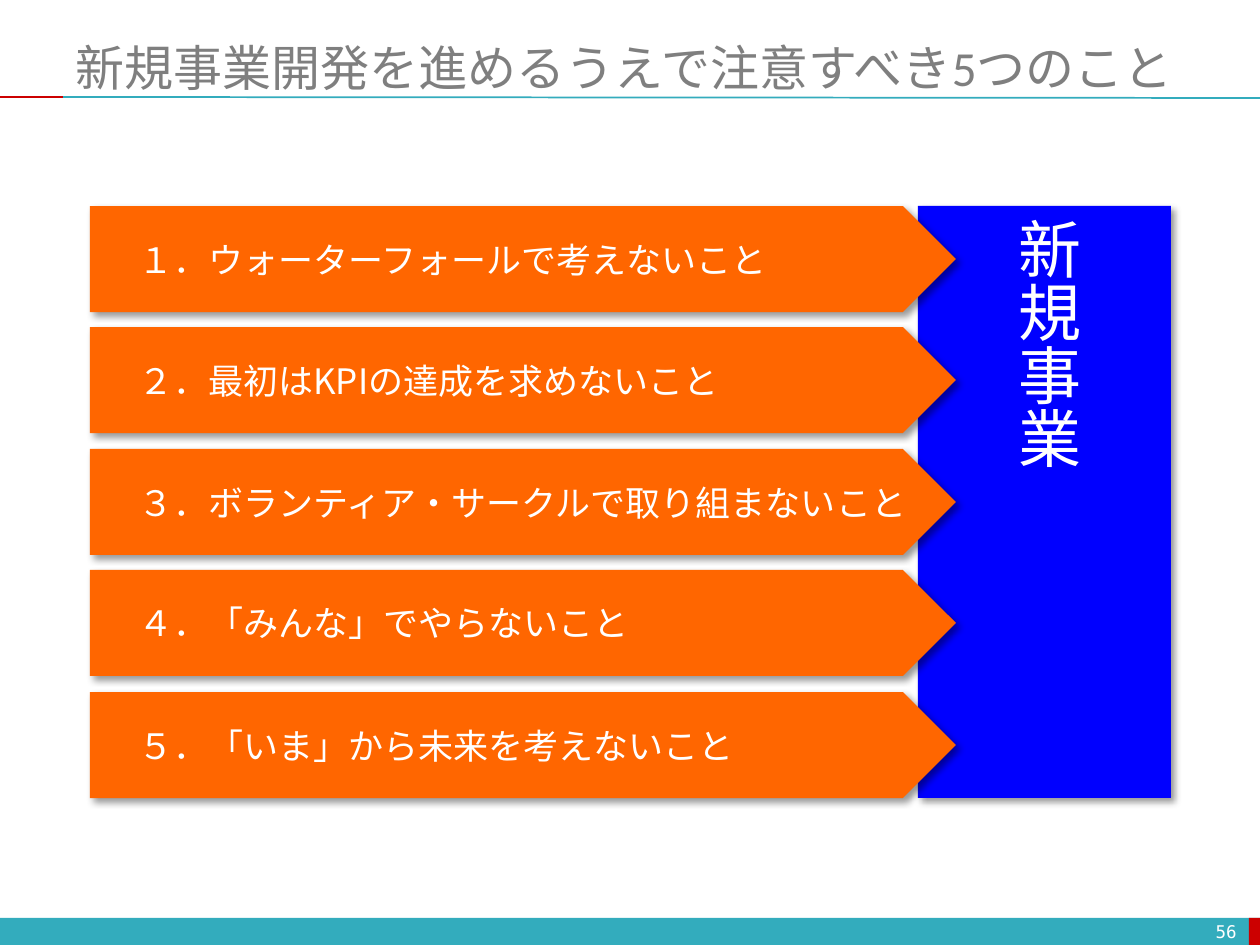
import pptx
import pptx.dml.color
import pptx.enum.shapes
import pptx.enum.text
import pptx.oxml
import pptx.oxml.ns
import pptx.util

RGB = pptx.dml.color.RGBColor
SHAPE = pptx.enum.shapes.MSO_SHAPE
ALIGN = pptx.enum.text.PP_ALIGN
TEAL = RGB(0x33, 0xAC, 0xBD)
RED = RGB(0xCC, 0x00, 0x00)
BLUE = RGB(0x00, 0x00, 0xFF)
ORANGE = RGB(0xFF, 0x66, 0x00)
GRAY = RGB(0x7F, 0x7F, 0x7F)
WHITE = RGB(0xFF, 0xFF, 0xFF)
CJK = "Noto Sans CJK JP"
SCALE = 914400 / 126
INSET = 13

POINTS = [
    "１．ウォーターフォールで考えないこと",
    "２．最初はKPIの達成を求めないこと",
    "３．ボランティア・サークルで取り組まないこと",
    "４．「みんな」でやらないこと",
    "５．「いま」から未来を考えないこと",
]
SHADOW = (
    '<a:effectLst %s><a:outerShdw blurRad="50800" dist="38100" dir="2700000" '
    'algn="tl" rotWithShape="0"><a:srgbClr val="000000"><a:alpha val="40000"/>'
    "</a:srgbClr></a:outerShdw></a:effectLst>" % pptx.oxml.ns.nsdecls("a")
)


def px(n):
    """Turn pixels into EMU."""
    return pptx.util.Emu(round(n * SCALE))


def set_text(sp, text, size, font, color, align=ALIGN.LEFT, left=INSET):
    """Write one vertically centred line of text into a shape."""
    tf = sp.text_frame
    tf.word_wrap = True
    tf.auto_size = pptx.enum.text.MSO_AUTO_SIZE.NONE
    tf.vertical_anchor = pptx.enum.text.MSO_ANCHOR.MIDDLE
    tf.margin_left = px(left)
    p = tf.paragraphs[0]
    p.alignment = align
    r = p.add_run()
    r.text = text
    r.font.size = pptx.util.Pt(size)
    r.font.name = font
    r.font.color.rgb = color
    if font == CJK:
        ea = pptx.oxml.parse_xml('<a:ea %s typeface="%s"/>' % (pptx.oxml.ns.nsdecls("a"), CJK))
        r.font._element.find(pptx.oxml.ns.qn("a:latin")).addnext(ea)


def add_block(s, kind, x, y, w, h, color, shadow=False):
    """Add a filled shape without outline."""
    sp = s.shapes.add_shape(kind, px(x), px(y), px(w), px(h))
    sp.fill.solid()
    sp.fill.fore_color.rgb = color
    sp.line.fill.background()
    sp.shadow.inherit = False
    if shadow:
        effects = sp._element.spPr.find(pptx.oxml.ns.qn("a:effectLst"))
        effects.getparent().replace(effects, pptx.oxml.parse_xml(SHADOW))
    return sp


def add_rule(s, x1, y1, x2, y2, color):
    """Add a thin straight line."""
    line = s.shapes.add_connector(
        pptx.enum.shapes.MSO_CONNECTOR.STRAIGHT, px(x1), px(y1), px(x2), px(y2))
    line.line.color.rgb = color
    line.line.width = pptx.util.Pt(1)
    line._element.spPr.append(
        pptx.oxml.parse_xml("<a:effectLst %s/>" % pptx.oxml.ns.nsdecls("a")))


def add_title(s, text):
    """Place and fill the title placeholder."""
    title = s.shapes.title
    title.left, title.top, title.width, title.height = px(63), px(38), px(1197), px(58)
    set_text(title, text, 28, "Calibri", GRAY)


def add_frame(s, number):
    """Add the rules, the footer bar and the page number."""
    add_block(s, SHAPE.RECTANGLE, 0, 918, 1260, 27, TEAL)
    add_block(s, SHAPE.RECTANGLE, 1249, 918, 11, 27, RED)
    add_rule(s, 63, 97, 1260, 98, TEAL)
    add_rule(s, 0, 97, 63, 97, RED)
    box = s.shapes.add_textbox(px(955), px(916), px(294), px(30))
    set_text(box, number, 10, "DejaVu Sans Mono", WHITE, ALIGN.RIGHT)


def add_target(s, text):
    """Add the block with vertical text that the arrows point at."""
    sp = add_block(s, SHAPE.RECTANGLE, 918, 206, 253, 592, BLUE, True)
    set_text(sp, text, 36, CJK, WHITE, ALIGN.CENTER)
    sp.text_frame._txBody.bodyPr.set("vert", "eaVert")


def add_point(s, i, text):
    """Add one arrow of the evenly spaced stack."""
    sp = add_block(s, SHAPE.PENTAGON, 90, 206 + i * 486 // 4, 866, 106, ORANGE, True)
    set_text(sp, text, 20, CJK, WHITE, left=INSET + 35)


def main():
    """Build the slide and save it."""
    prs = pptx.Presentation()
    prs.slide_width, prs.slide_height = px(1260), px(945)
    s = prs.slides.add_slide(prs.slide_layouts[5])
    add_frame(s, "56")
    add_title(s, "新規事業開発を進めるうえで注意すべき5つのこと")
    add_target(s, "新規事業")
    for i, text in enumerate(POINTS):
        add_point(s, i, text)
    prs.save("out.pptx")


if __name__ == "__main__":
    main()
